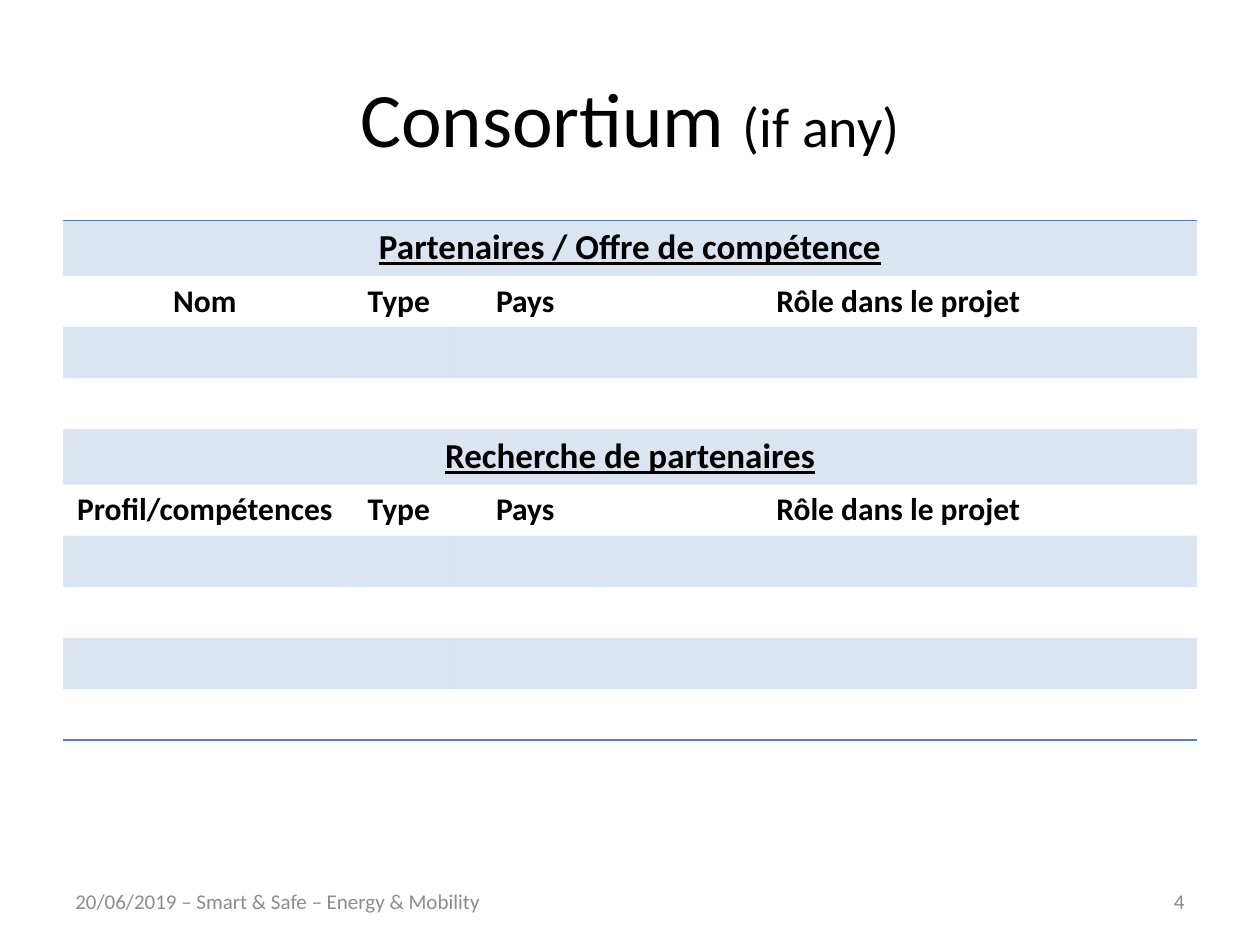
from lxml.etree import SubElement
from pptx import Presentation
from pptx.dml.color import RGBColor
from pptx.enum.text import MSO_ANCHOR as Anchor, PP_ALIGN as Align
from pptx.oxml import parse_xml
from pptx.oxml.ns import nsdecls, qn
from pptx.util import Cm, Pt

FONT = "Calibri"
BLACK = RGBColor(0x00, 0x00, 0x00)
BLUE = RGBColor(0x4F, 0x81, 0xBD)
NUMBER_GREY = RGBColor(0x89, 0x89, 0x89)
FOOTER_GREY = RGBColor(0x8C, 0x8C, 0x8C)
NO_STYLE_NO_GRID = "{2D5ABB26-0587-4C30-8999-92F81FD0307C}"


def add_run(paragraph, text, size, color=BLACK, align=Align.CENTER):
    paragraph.alignment = align
    run = paragraph.add_run()
    run.text = text
    run.font.name = FONT
    run.font.size = Pt(size)
    run.font.color.rgb = color
    return run


def add_border(cell, side):
    line = parse_xml(
        f'<a:{side} {nsdecls("a")} w="{Pt(1)}"><a:solidFill>'
        f'<a:srgbClr val="{BLUE}"/></a:solidFill></a:{side}>'
    )
    cell._tc.get_or_add_tcPr().insert(0, line)


presentation = Presentation()
presentation.slide_width = Cm(25.4)
presentation.slide_height = Cm(19.05)
slide = presentation.slides.add_slide(presentation.slide_layouts[5])

title = slide.shapes.title
title.left, title.top, title.width, title.height = Cm(1.27), Cm(0.76), Cm(22.86), Cm(3.18)
title.text_frame.vertical_anchor = Anchor.MIDDLE
title_paragraph = title.text_frame.paragraphs[0]
add_run(title_paragraph, "Consortium ", 44)
add_run(title_paragraph, "(if any)", 32)

common_headings = ["Type", "Pays", "Rôle dans le projet"]
rows = [
    ["Partenaires / Offre de compétence"],
    ["Nom"] + common_headings,
    [],
    [],
    ["Recherche de partenaires"],
    ["Profil/compétences"] + common_headings,
    [],
    [],
    [],
    [],
]
column_widths = [5.72, 2.1, 3, 12.04]

frame = slide.shapes.add_table(
    len(rows), len(column_widths), Cm(1.27), Cm(4.44), Cm(22.86), Cm(10.48)
)
table = frame.table
table.first_row = False
table.horz_banding = False
table._tbl.tblPr.find(qn("a:tableStyleId")).text = NO_STYLE_NO_GRID
for column, width in zip(table.columns, column_widths):
    column.width = Cm(width)

for row_index, texts in enumerate(rows):
    is_section = len(texts) == 1
    row = table.rows[row_index]
    row.height = Cm(1.12 if is_section else 1.03)
    for cell in row.cells:
        if row_index % 2 == 0:
            cell.fill.solid()
            cell.fill.fore_color.rgb = BLUE
            color = cell._tc.tcPr.find(".//" + qn("a:srgbClr"))
            SubElement(color, qn("a:alpha")).set("val", "20000")
        else:
            cell.fill.background()
        if row_index == 0:
            add_border(cell, "lnT")
        if row_index == len(rows) - 1:
            add_border(cell, "lnB")
    if is_section:
        table.cell(row_index, 0).merge(table.cell(row_index, len(column_widths) - 1))
    for cell, text in zip(row.cells, texts):
        run = add_run(cell.text_frame.paragraphs[0], text, 20 if is_section else 18)
        run.font.bold = True
        run.font.underline = is_section

footers = [
    ("4", 18.21, 5.92, NUMBER_GREY, Align.RIGHT),
    ("20/06/2019 – Smart & Safe – Energy & Mobility", 1.27, 9.63, FOOTER_GREY, Align.LEFT),
]
for text, left, width, color, align in footers:
    shape = slide.shapes.add_textbox(Cm(left), Cm(17.66), Cm(width), Cm(1.01))
    shape.text_frame.word_wrap = True
    shape.text_frame.vertical_anchor = Anchor.MIDDLE
    add_run(shape.text_frame.paragraphs[0], text, 12, color, align)

presentation.save("out.pptx")
